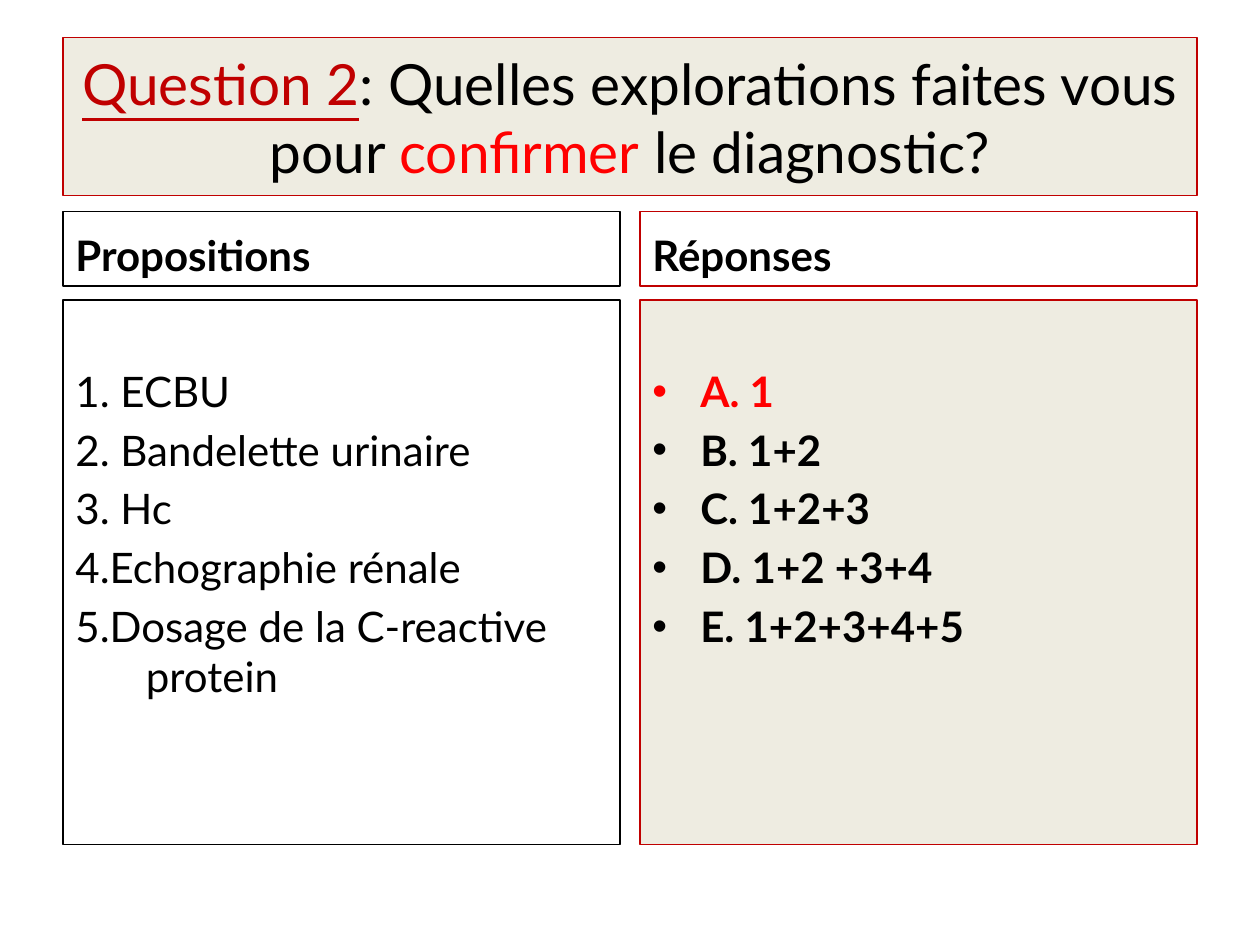
from lxml.etree import SubElement
from pptx import Presentation
from pptx.dml.color import RGBColor
from pptx.enum.shapes import MSO_SHAPE as Shape
from pptx.enum.text import MSO_ANCHOR as Anchor, MSO_AUTO_SIZE as AutoSize, PP_ALIGN as Align
from pptx.oxml.ns import qn
from pptx.util import Inches, Pt

FONT = "Lato"
BLACK, RED, DARK_RED, BEIGE = "000000", "FF0000", "C00000", "EEECE1"

# Two equal columns between the side margins
WIDTH, HEIGHT = 10, 7.5
MARGIN, GUTTER = 0.5, 0.16
COLUMN = (WIDTH - 2 * MARGIN - GUTTER) / 2
COLUMN_LEFTS = [MARGIN, MARGIN + COLUMN + GUTTER]
# Each row: top, height
TITLE_ROW, HEADING_ROW, LIST_ROW = (0.3, 1.25), (1.68, 0.59), (2.38, 4.32)

PROPOSITIONS = ["1. ECBU", "2. Bandelette urinaire", "3. Hc",
                "4.Echographie rénale", "5.Dosage de la C-reactive protein"]
ANSWERS = ["A. 1", "B. 1+2", "C. 1+2+3", "D. 1+2 +3+4", "E. 1+2+3+4+5"]
CORRECT = "A. 1"


def color(hex_string):
    return RGBColor.from_string(hex_string)


def style_panel(panel, line, fill=None, anchor=Anchor.TOP):
    if fill:
        panel.fill.solid()
        panel.fill.fore_color.rgb = color(fill)
    else:
        panel.fill.background()
    panel.line.color.rgb = color(line)
    panel.line.width = Pt(0.75)
    frame = panel.text_frame
    frame.word_wrap = True
    frame.auto_size = AutoSize.NONE
    frame.vertical_anchor = anchor
    return frame


def add_panel(slide, left, row, line, fill=None, anchor=Anchor.TOP):
    top, height = row
    panel = slide.shapes.add_shape(Shape.RECTANGLE, Inches(left), Inches(top),
                                   Inches(COLUMN), Inches(height))
    panel.shadow.inherit = False
    return style_panel(panel, line, fill, anchor)


def add_run(paragraph, text, size=24, ink=BLACK, bold=False, underline=False):
    run = paragraph.add_run()
    run.text = text
    font = run.font
    font.name, font.size = FONT, Pt(size)
    font.bold, font.underline = bold, underline
    font.color.rgb = color(ink)


def set_hanging(paragraph, indent, bullet=None):
    props = paragraph._p.get_or_add_pPr()
    props.set("marL", str(Inches(indent)))
    props.set("indent", str(-Inches(indent)))
    if bullet:
        SubElement(props, qn("a:buFont"), typeface="Arial")
        SubElement(props, qn("a:buChar"), char=bullet)


def add_title(slide):
    title = slide.shapes.title
    title.left, title.width = Inches(MARGIN), Inches(WIDTH - 2 * MARGIN)
    title.top, title.height = (Inches(length) for length in TITLE_ROW)
    question = style_panel(title, DARK_RED, BEIGE, Anchor.MIDDLE).paragraphs[0]
    question.alignment = Align.CENTER
    size = 32.4
    add_run(question, "Question 2", size, DARK_RED, underline=True)
    add_run(question, ": Quelles explorations faites vous pour ", size)
    add_run(question, "confirmer", size, RED)
    add_run(question, " le diagnostic?", size)


def add_heading(slide, left, text, line):
    heading = add_panel(slide, left, HEADING_ROW, line, anchor=Anchor.BOTTOM).paragraphs[0]
    heading.alignment = Align.LEFT
    add_run(heading, text, bold=True)


def add_list(slide, left, items, line, indent, fill=None, bullet=None, bold=False):
    frame = add_panel(slide, left, LIST_ROW, line, fill)
    frame.margin_top = Inches(0.52)  # the list starts one line down
    for index, item in enumerate(items):
        entry = frame.add_paragraph() if index else frame.paragraphs[0]
        entry.alignment = Align.LEFT
        entry.space_before = Pt(4.8 if index else 0)
        set_hanging(entry, indent, bullet)
        add_run(entry, item, ink=RED if item == CORRECT else BLACK, bold=bold)


def main():
    deck = Presentation()
    deck.slide_width, deck.slide_height = Inches(WIDTH), Inches(HEIGHT)
    slide = deck.slides.add_slide(deck.slide_layouts[5])
    add_title(slide)

    # Left column: propositions; right column: answers
    left, right = COLUMN_LEFTS
    add_heading(slide, left, "Propositions", BLACK)
    add_list(slide, left, PROPOSITIONS, BLACK, indent=0.56)
    add_heading(slide, right, "Réponses", DARK_RED)
    add_list(slide, right, ANSWERS, DARK_RED, indent=0.38, fill=BEIGE, bullet="•", bold=True)

    deck.save("out.pptx")


if __name__ == "__main__":
    main()
